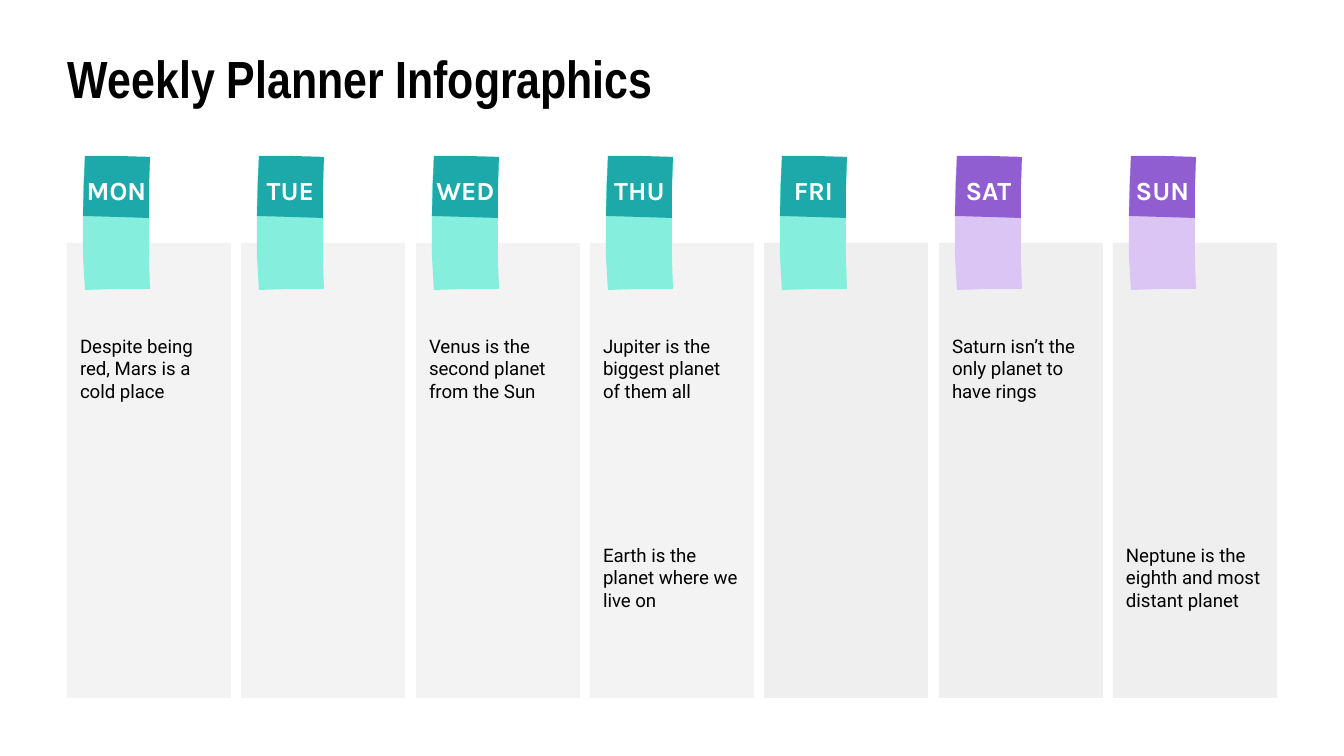
from pptx import Presentation
from pptx.dml.color import RGBColor
from pptx.enum.shapes import MSO_SHAPE
from pptx.enum.text import MSO_ANCHOR, MSO_AUTO_SIZE, PP_ALIGN
from pptx.util import Emu, Pt

EMU_PER_PX = 914400 / 134.4
FIRST_LEFT, LAST_LEFT = 67, 1113
COLUMN_WIDTH = 164
COLORS = {
    "text": "000000",
    "day": "FFFFFF",
    "early column": "F3F3F3",
    "late column": "EFEFEF",
    "weekday label": "1DA9A9",
    "weekday paper": "85EEDD",
    "weekend label": "905ED1",
    "weekend paper": "DAC5F5",
}
PAPER = [(18, 157), (50, 157), (83, 158), (82, 190), (82, 223), (82, 256),
         (83, 289), (50, 289), (18, 290), (16, 256), (16, 223), (16, 190)]
LABEL = [(18, 156), (50, 156), (83, 157), (82, 187), (82, 218), (49, 217), (16, 216), (17, 186)]
FONTS = {
    "title": {"name": "Arial Narrow", "size": Pt(28), "bold": True},
    "day": {"name": "Karla", "size": Pt(14), "bold": True},
    "note": {"name": "Roboto", "size": Pt(10), "bold": False},
}
DAYS = ["MON", "TUE", "WED", "THU", "FRI", "SAT", "SUN"]
UPPER_TOP, LOWER_TOP = 320, 529
NOTES = [
    ("MON", UPPER_TOP, "Despite being red, Mars is a cold place"),
    ("WED", UPPER_TOP, "Venus is the second planet from the Sun"),
    ("THU", UPPER_TOP, "Jupiter is the biggest planet of them all"),
    ("SAT", UPPER_TOP, "Saturn isn’t the only planet to have rings"),
    ("THU", LOWER_TOP, "Earth is the planet where we live on"),
    ("SUN", LOWER_TOP, "Neptune is the eighth and most distant planet"),
]


def px(length):
    """Turn pixels into EMU."""
    return Emu(round(length * EMU_PER_PX))


def column_left(day):
    """Return the left edge of a day's column."""
    index = DAYS.index(day)
    return round(FIRST_LEFT + index * (LAST_LEFT - FIRST_LEFT) / (len(DAYS) - 1))


def set_values(target, values):
    """Set each named attribute on the target."""
    for name, value in values.items():
        setattr(target, name, value)


def paint(shape, color):
    """Give a shape a flat fill without line or shadow."""
    shape.shadow.inherit = False
    shape.fill.solid()
    shape.fill.fore_color.rgb = RGBColor.from_string(COLORS[color])
    shape.line.fill.background()


def write(box, text, font, color="text", align=PP_ALIGN.LEFT):
    """Fill a box with one formatted paragraph."""
    frame = box.text_frame
    margins = {f"margin_{side}": px(13) for side in ("left", "top", "right", "bottom")}
    set_values(frame, {
        "word_wrap": True,
        "auto_size": MSO_AUTO_SIZE.NONE,
        "vertical_anchor": MSO_ANCHOR.MIDDLE,
        **margins,
    })
    para = frame.paragraphs[0]
    para.alignment = align
    span = para.add_run()
    span.text = text
    set_values(span.font, FONTS[font])
    span.font.color.rgb = RGBColor.from_string(COLORS[color])


def add_title(page, text):
    """Place the page title."""
    title = page.shapes.title
    set_values(title, {"left": px(55), "top": px(32), "width": px(720), "height": px(91)})
    write(title, text, "title")


def add_column(page, day):
    """Draw the panel behind a day's notes."""
    color = "early column" if DAYS.index(day) < 4 else "late column"
    panel = page.shapes.add_shape(
        MSO_SHAPE.RECTANGLE, px(column_left(day)), px(243), px(COLUMN_WIDTH), px(455))
    paint(panel, color)


def add_outline(group, left, points, color):
    """Draw a closed outline shifted to the column."""
    start, *others = [(left + x, y) for x, y in points]
    builder = group.shapes.build_freeform(*start, scale=EMU_PER_PX)
    builder.add_line_segments(others, close=True)
    paint(builder.convert_to_shape(), color)


def add_sticker(page, day):
    """Draw the two-tone paper sticker with the day's name."""
    left = column_left(day)
    kind = "weekend" if day in ("SAT", "SUN") else "weekday"
    group = page.shapes.add_group_shape()
    add_outline(group, left, PAPER, f"{kind} paper")
    add_outline(group, left, LABEL, f"{kind} label")
    box = page.shapes.add_textbox(px(left + 5), px(160), px(89), px(60))
    write(box, day, "day", "day", PP_ALIGN.CENTER)


def add_note(page, day, top, text):
    """Place a note in a day's column."""
    box = page.shapes.add_textbox(px(column_left(day)), px(top), px(COLUMN_WIDTH), px(97))
    write(box, text, "note")


def main():
    """Build and save the weekly planner."""
    deck = Presentation()
    set_values(deck, {"slide_width": px(1344), "slide_height": px(756)})
    page = deck.slides.add_slide(deck.slide_layouts[5])
    add_title(page, "Weekly Planner Infographics")
    for day in DAYS:
        add_column(page, day)
        add_sticker(page, day)
    for day, top, text in NOTES:
        add_note(page, day, top, text)
    deck.save("out.pptx")


if __name__ == "__main__":
    main()
